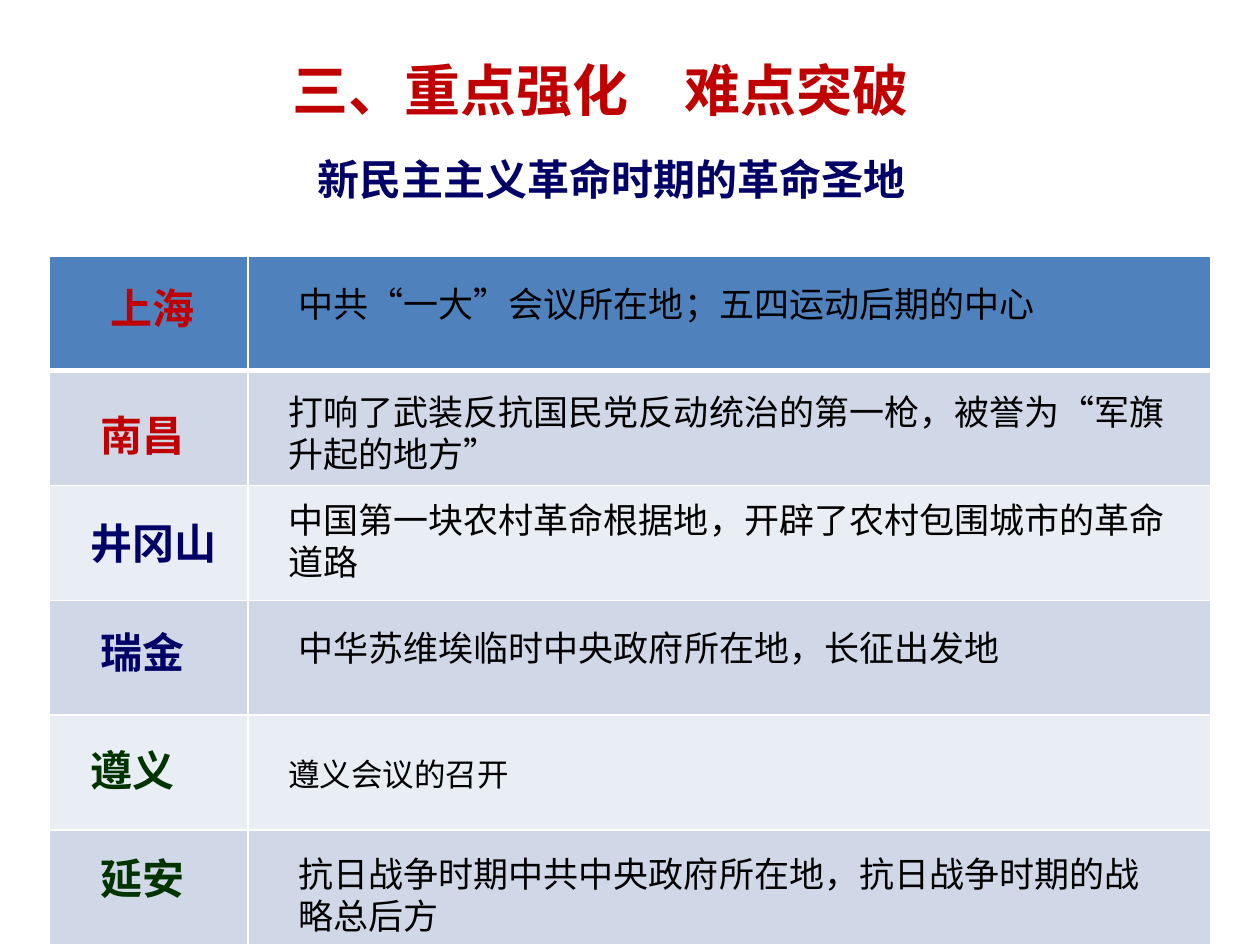
from lxml.etree import SubElement
from pptx import Presentation
from pptx.dml.color import RGBColor
from pptx.enum.text import PP_ALIGN as Align
from pptx.oxml.ns import qn
from pptx.util import Inches, Pt

RED = RGBColor(0xC0, 0x00, 0x00)
NAVY = RGBColor(0x00, 0x00, 0x66)
GREEN = RGBColor(0x00, 0x33, 0x00)
BLACK = RGBColor(0x00, 0x00, 0x00)
WHITE = RGBColor(0xFF, 0xFF, 0xFF)
HEADER_BLUE = RGBColor(0x4F, 0x81, 0xBD)
BANDS = (RGBColor(0xE9, 0xED, 0xF4), RGBColor(0xD0, 0xD8, 0xE8))

FONT = "Calibri"
TITLE = "三、重点强化　难点突破"
SUBTITLE = "新民主主义革命时期的革命圣地"

# place, colour, (left, top, width), description, size, (left, top, width)
PLACES = [
    ("上海", RED, (0.78, 2.19, 0.88),
     "中共“一大”会议所在地；五四运动后期的中心", 20, (2.27, 2.19, 6.48)),
    ("南昌", RED, (0.7, 3.2, 0.94),
     "打响了武装反抗国民党反动统治的第一枪，被誉为“军旗升起的地方”", 20, (2.19, 3.05, 7.42)),
    ("井冈山", NAVY, (0.62, 4.06, 1.25),
     "中国第一块农村革命根据地，开辟了农村包围城市的革命道路", 20, (2.19, 3.91, 7.42)),
    ("瑞金", NAVY, (0.7, 4.92, 1.02),
     "中华苏维埃临时中央政府所在地，长征出发地", 20, (2.27, 4.92, 7.19)),
    ("遵义", GREEN, (0.62, 5.86, 1.33),
     "遵义会议的召开", 18, (2.19, 5.94, 6.64)),
    ("延安", GREEN, (0.7, 6.72, 1.02),
     "抗日战争时期中共中央政府所在地，抗日战争时期的战略总后方", 20, (2.27, 6.72, 7.03)),
]
COLUMN_WIDTHS = (1.58, 7.64)
TABLE_LEFT, TABLE_TOP, TABLE_HEIGHT = 0.39, 2.03, 5.47
LINE_HEIGHTS = {18: 0.4, 20: 0.44, 24: 0.5, 32: 0.64}


def add_text(page, text, place, size, color, bold=False, align=Align.LEFT):
    left, top, width = place
    box = page.shapes.add_textbox(
        Inches(left), Inches(top), Inches(width), Inches(LINE_HEIGHTS[size]))
    box.text_frame.word_wrap = True
    para = box.text_frame.paragraphs[0]
    para.text = text
    para.alignment = align
    para.font.name = FONT
    para.font.size = Pt(size)
    para.font.bold = bold
    para.font.color.rgb = color


def style_cell(cell, color, bottom):
    cell.fill.solid()
    cell.fill.fore_color.rgb = color
    properties = cell._tc.get_or_add_tcPr()
    for index, (side, width) in enumerate(
            (("L", 1), ("R", 1), ("T", 1), ("B", bottom))):
        line = SubElement(properties, qn(f"a:ln{side}"), w=str(Pt(width)))
        fill = SubElement(line, qn("a:solidFill"))
        SubElement(fill, qn("a:srgbClr"), val=str(WHITE))
        properties.insert(index, line)


def add_grid(page):
    table = page.shapes.add_table(
        len(PLACES), len(COLUMN_WIDTHS), Inches(TABLE_LEFT), Inches(TABLE_TOP),
        Inches(sum(COLUMN_WIDTHS)), Inches(TABLE_HEIGHT)).table
    for column, width in zip(table.columns, COLUMN_WIDTHS):
        column.width = Inches(width)
    for number, row in enumerate(table.rows):
        color = BANDS[number % 2] if number else HEADER_BLUE
        for cell in row.cells:
            style_cell(cell, color, bottom=1 if number else 3)
    for cell in table.rows[1].cells:
        top_line = cell._tc.tcPr.find(qn("a:lnT"))
        top_line.set("w", str(Pt(3)))


def main():
    deck = Presentation()
    deck.slide_width, deck.slide_height = Inches(10), Inches(7.5)
    page = deck.slides.add_slide(deck.slide_layouts[6])
    add_text(page, TITLE, (0.55, 0.39, 8.44), 32, RED, True, Align.CENTER)
    add_text(page, SUBTITLE, (2.42, 1.17, 6.41), 24, NAVY, True)
    add_grid(page)
    for name, color, name_place, description, size, description_place in PLACES:
        add_text(page, name, name_place, 24, color, True)
        add_text(page, description, description_place, size, BLACK)
    deck.save("out.pptx")


if __name__ == "__main__":
    main()
